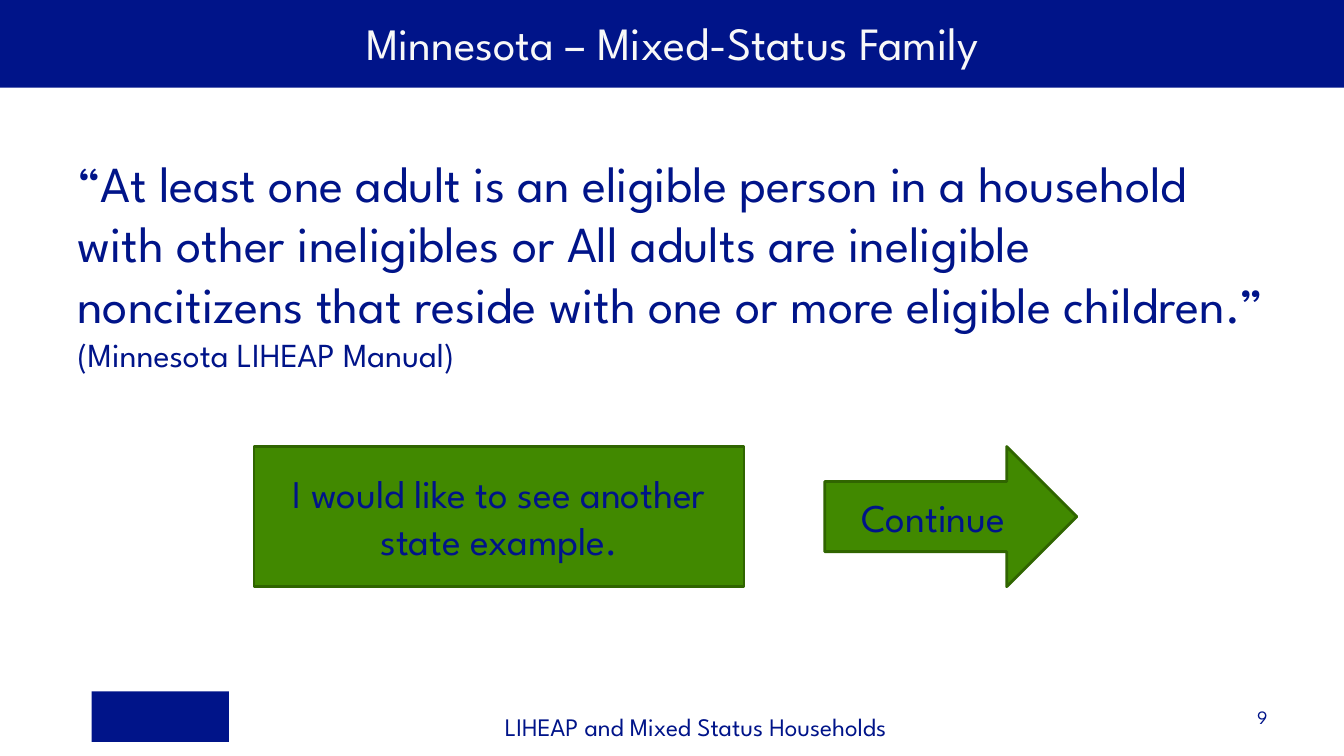
from pptx import Presentation
from pptx.dml.color import RGBColor
from pptx.enum.shapes import MSO_SHAPE
from pptx.enum.text import MSO_ANCHOR, PP_ALIGN
from pptx.util import Inches, Pt

NAVY = RGBColor(0x00, 0x14, 0x89)
PALE = RGBColor(0xF8, 0xF8, 0xF8)
GREEN = RGBColor(0x41, 0x89, 0x00)
MOSS = RGBColor(0x30, 0x65, 0x00)
FACE = "League Spartan"
LEFT, MID, RIGHT = PP_ALIGN.LEFT, PP_ALIGN.CENTER, PP_ALIGN.RIGHT
TOP, CORE = MSO_ANCHOR.TOP, MSO_ANCHOR.MIDDLE

WIDE, HIGH = 13.33, 7.5
EDGE, SPAN = 0.67, 12
ROW, TALL = 4.43, 1.39

BLOCKS = [(0, 0, WIDE, 0.87), (0.91, 6.86, 1.36, 0.5)]
TEXTS = [
    ((3.76, 7.01, 6.28, 0.38), MID, TOP, NAVY,
     [("LIHEAP and Mixed Status Households", 18)]),
    ((EDGE, 0.09, SPAN, 0.77), MID, TOP, PALE,
     [("Minnesota", 32), (" – Mixed-Status Family", 33)]),
    ((EDGE, 1.46, SPAN, 2.78), LEFT, TOP, NAVY,
     [("“At least one adult is an eligible person in a household with other "
       "ineligibles or All adults are ineligible noncitizens that reside with "
       "one or more eligible children.” ", 36),
      ("(Minnesota LIHEAP Manual)", 24)]),
    ((9.56, 6.95, 3.11, 0.4), RIGHT, TOP, NAVY, [("9", 13.5)]),
]
BUTTONS = [
    (MSO_SHAPE.RECTANGLE, 2.52, 4.86, "I would like to see another state example."),
    (MSO_SHAPE.RIGHT_ARROW, 8.18, 2.5, "Continue"),
]


def write(shape, align, anchor, color, runs):
    frame = shape.text_frame
    frame.word_wrap = True
    frame.vertical_anchor = anchor
    para = frame.paragraphs[0]
    para.alignment = align
    for text, size in runs:
        run = para.add_run()
        run.text = text
        form = {"name": FACE, "size": Pt(size), "bold": False}
        for key, value in form.items():
            setattr(run.font, key, value)
        run.font.color.rgb = color


def draw(slide, kind, box, fill):
    shape = slide.shapes.add_shape(kind, *map(Inches, box))
    shape.shadow.inherit = False
    shape.fill.solid()
    shape.fill.fore_color.rgb = fill
    return shape


def main():
    deck = Presentation()
    deck.slide_width, deck.slide_height = Inches(WIDE), Inches(HIGH)
    slide = deck.slides.add_slide(deck.slide_layouts[6])

    for box in BLOCKS:
        block = draw(slide, MSO_SHAPE.RECTANGLE, box, NAVY)
        block.line.fill.background()

    for box, *style in TEXTS:
        write(slide.shapes.add_textbox(*map(Inches, box)), *style)

    for kind, left, width, label in BUTTONS:
        button = draw(slide, kind, (left, ROW, width, TALL), GREEN)
        button.line.color.rgb = MOSS
        button.line.width = Pt(2)
        write(button, MID, CORE, NAVY, [(label, 28)])

    deck.save("out.pptx")


if __name__ == "__main__":
    main()
